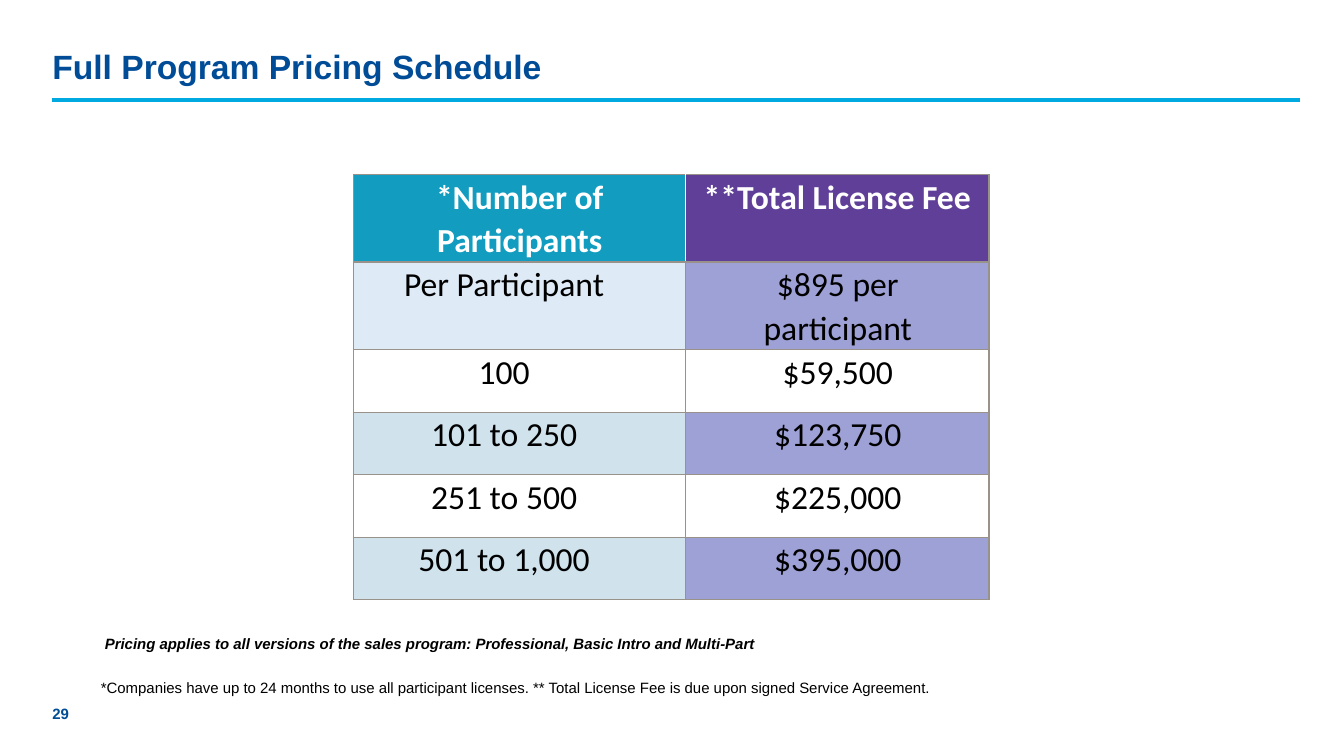
from dataclasses import dataclass

from lxml.etree import SubElement
from pptx import Presentation
from pptx.dml.color import RGBColor
from pptx.enum.shapes import MSO_CONNECTOR
from pptx.enum.text import MSO_ANCHOR, PP_ALIGN
from pptx.oxml import parse_xml
from pptx.oxml.ns import nsdecls, qn
from pptx.util import Inches, Pt


@dataclass(frozen=True)
class Theme:
    font: str = "Arial"
    table_font: str = "Calibri"
    navy: str = "004C97"
    sky: str = "00A9E0"
    black: str = "000000"
    white: str = "FFFFFF"
    teal: str = "129DC0"
    purple: str = "603F99"
    pale: str = "DEEAF6"
    mist: str = "D0E2EC"
    lilac: str = "9EA1D6"
    border: str = "99928A"
    large: float = 24
    small: float = 10.7
    rule: float = 2.75


T = Theme()
WIDTH, HEIGHT = 13.33, 7.5
LEFT, CONTENT_WIDTH = 0.52, 12.37

COLUMNS = (3.29, 3.01)
ROW_HEIGHTS = (0.87, 0.87) + (0.62,) * 4
# Left and right insets of the body cells in each column
INSETS = ((0, 0.31), (0.26, 0.25))
PRICES = [
    ("*Number of Participants", "**Total License Fee"),
    ("Per Participant", "$895 per participant"),
    ("100", "$59,500"),
    ("101 to 250", "$123,750"),
    ("251 to 500", "$225,000"),
    ("501 to 1,000", "$395,000"),
]
FILLS = [(T.teal, T.purple), (T.pale, T.lilac)] + [(None, None), (T.mist, T.lilac)] * 2


def style(p, size, color, font=T.font, bold=False, italic=False):
    f = p.font
    f.name, f.size, f.bold, f.italic = font, Pt(size), bold, italic
    f.color.rgb = RGBColor.from_string(color)


def add_text(s, box, lines, wrap=True):
    """Add a bottom-anchored, inset-free text box and return its paragraphs."""
    tf = s.shapes.add_textbox(*map(Inches, box)).text_frame
    tf.word_wrap = wrap
    tf.vertical_anchor = MSO_ANCHOR.BOTTOM
    tf.margin_left = tf.margin_right = tf.margin_top = tf.margin_bottom = 0
    tf.text = "\n".join(lines)
    return tf.paragraphs


def add_heading(s, box):
    left, top, width, height = box
    p = add_text(s, (left, top, width, height), ["Full Program Pricing Schedule"])[0]
    p.line_spacing = 1.2
    style(p, T.large, T.navy, bold=True)

    y = Inches(top + height + 0.13)
    rule = s.shapes.add_connector(
        MSO_CONNECTOR.STRAIGHT, Inches(left), y, Inches(left + width), y)
    rule.line.color.rgb = RGBColor.from_string(T.sky)
    rule.line.width = Pt(T.rule)
    SubElement(rule._element.spPr, qn("a:effectLst"))


def set_borders(cell, **colors):
    tcPr = cell._tc.get_or_add_tcPr()
    for i, side in enumerate("LRTB"):
        tcPr.insert(i, parse_xml(
            f'<a:ln{side} {nsdecls("a")} w="12700"><a:solidFill>'
            f'<a:srgbClr val="{colors.get(side, T.border)}"/>'
            f'</a:solidFill></a:ln{side}>'))


def fill_cell(cell, text, fill, header, col):
    cell.margin_left, cell.margin_right = (
        (0, 0) if header else map(Inches, INSETS[col]))
    cell.margin_top = cell.margin_bottom = 0
    cell.text = text
    p = cell.text_frame.paragraphs[0]
    p.alignment = PP_ALIGN.CENTER
    p.line_spacing = 1.07
    style(p, T.large, T.white if header else T.black, T.table_font, bold=header)
    if fill:
        cell.fill.solid()
        cell.fill.fore_color.rgb = RGBColor.from_string(fill)
    else:
        cell.fill.background()
    divider = {"LR"[1 - col]: T.white} if header else {}
    set_borders(cell, **divider)


def add_price_table(s, left, top):
    table = s.shapes.add_table(
        len(PRICES), len(COLUMNS), Inches(left), Inches(top),
        Inches(sum(COLUMNS)), Inches(sum(ROW_HEIGHTS))).table
    table.horz_banding = False
    for column, width in zip(table.columns, COLUMNS):
        column.width = Inches(width)
    for row, height in zip(table.rows, ROW_HEIGHTS):
        row.height = Inches(height)
    for r, (texts, fills) in enumerate(zip(PRICES, FILLS)):
        for c, (text, fill) in enumerate(zip(texts, fills)):
            fill_cell(table.cell(r, c), text, fill, r == 0, c)


def add_footnotes(s, box):
    pricing, terms = add_text(s, box, [
        "Pricing applies to all versions of the sales program: "
        "Professional, Basic Intro and Multi-Part",
        "*Companies have up to 24 months to use all participant licenses. "
        "** Total License Fee is due upon signed Service Agreement.",
    ])
    pricing.line_spacing = terms.line_spacing = 1.2
    pricing.space_after = Pt(16)
    pricing._p.get_or_add_pPr().set("marL", str(Inches(0.04)))
    style(pricing, T.small, T.black, bold=True, italic=True)
    style(terms, T.small, T.black)


def add_page_number(s, box):
    style(add_text(s, box, ["29"])[0], T.small, T.navy, bold=True)


def add_pricing_slide(prs):
    s = prs.slides.add_slide(prs.slide_layouts[6])
    add_heading(s, (LEFT, 0.39, CONTENT_WIDTH, 0.47))
    add_price_table(s, 3.51, 1.73)
    add_footnotes(s, (1, 6.25, 9.73, 0.66))
    add_page_number(s, (LEFT, 6.81, 0.36, 0.36))


def main():
    prs = Presentation()
    prs.slide_width, prs.slide_height = Inches(WIDTH), Inches(HEIGHT)
    add_pricing_slide(prs)
    prs.save("out.pptx")


if __name__ == "__main__":
    main()
